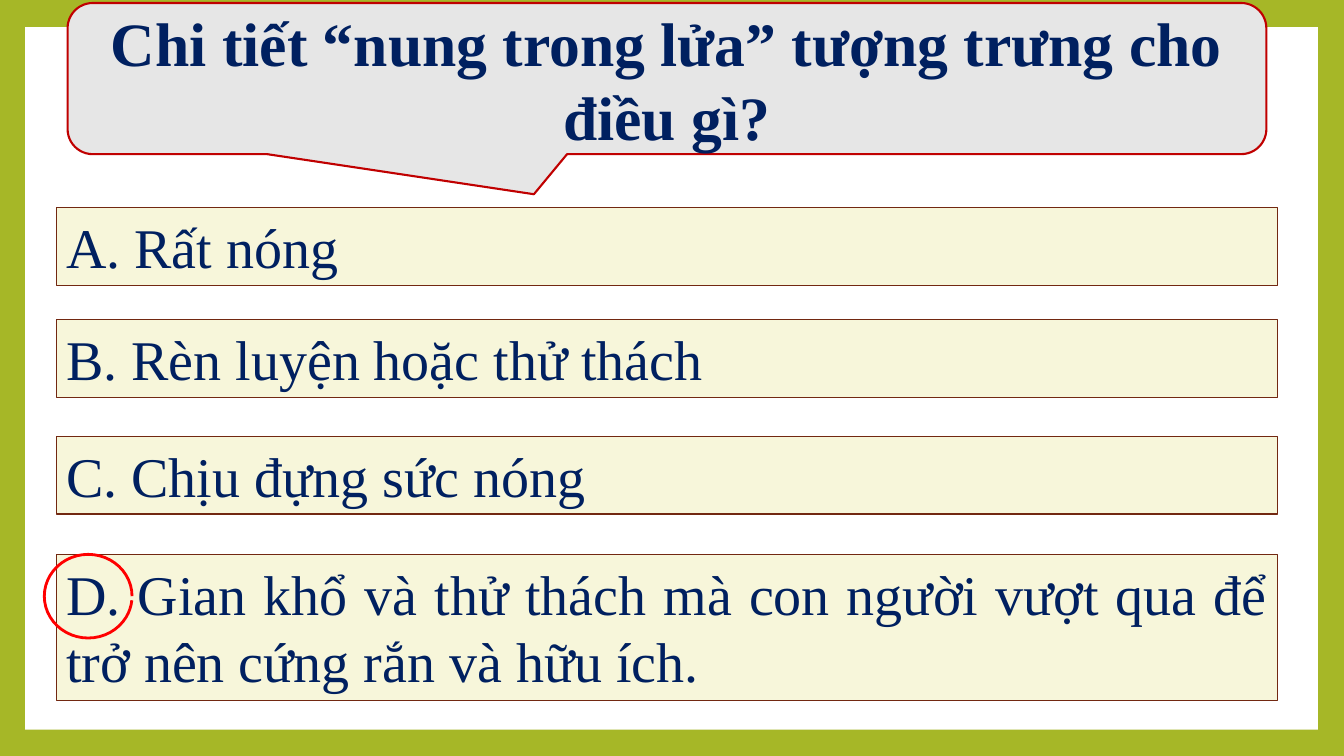
import pptx
import pptx.dml.color
import pptx.enum.shapes
import pptx.enum.text
import pptx.util

Inches = pptx.util.Inches
Pt = pptx.util.Pt
RGBColor = pptx.dml.color.RGBColor
SHAPE = pptx.enum.shapes.MSO_SHAPE
ALIGN = pptx.enum.text.PP_ALIGN
ANCHOR = pptx.enum.text.MSO_ANCHOR
AUTO_SIZE = pptx.enum.text.MSO_AUTO_SIZE

GREEN = RGBColor(0xA6, 0xB7, 0x27)
WHITE = RGBColor(0xFF, 0xFF, 0xFF)
GREY = RGBColor(0xE6, 0xE6, 0xE6)
DARK_RED = RGBColor(0xC0, 0x00, 0x00)
CREAM = RGBColor(0xF7, 0xF6, 0xDA)
BROWN = RGBColor(0x72, 0x28, 0x11)
NAVY = RGBColor(0x00, 0x20, 0x60)
RED = RGBColor(0xFF, 0x00, 0x00)
FONT = "Times New Roman"

QUESTION = "Chi tiết “nung trong lửa” tượng trưng cho điều gì?"
ANSWERS = [
    ("A. Rất nóng", 2.06, 0.77),
    ("B. Rèn luyện hoặc thử thách", 3.17, 0.77),
    ("C. Chịu đựng sức nóng", 4.33, 0.77),
    ("D. Gian khổ và thử thách mà con người vượt qua để trở nên cứng rắn và hữu ích.", 5.5, 1.45),
]
CORRECT = 3


def write_text(holder, text, size, align, bold=False):
    """Write one wrapped navy paragraph into the holder."""
    frame = holder.text_frame
    frame.text = text
    frame.word_wrap = True
    paragraph = frame.paragraphs[0]
    paragraph.alignment = align
    font = paragraph.runs[0].font
    font.name, font.size, font.bold = FONT, Pt(size), bold
    font.color.rgb = NAVY


def add_frame(slide, left, top, width, height):
    """Paint the green surround and the white panel."""
    slide.background.fill.solid()
    slide.background.fill.fore_color.rgb = GREEN
    panel = slide.shapes.add_shape(
        SHAPE.RECTANGLE, Inches(left), Inches(top), Inches(width), Inches(height))
    panel.shadow.inherit = False
    panel.fill.solid()
    panel.fill.fore_color.rgb = WHITE
    panel.line.fill.background()


def add_question(slide, left, top, width, height):
    """Draw the speech callout and set the title over it."""
    box = Inches(left), Inches(top), Inches(width), Inches(height)
    callout = slide.shapes.add_shape(SHAPE.ROUNDED_RECTANGULAR_CALLOUT, *box)
    for index, value in enumerate((-0.111, 0.765, 0.167)):
        callout.adjustments[index] = value
    callout.shadow.inherit = False
    callout.fill.solid()
    callout.fill.fore_color.rgb = GREY
    callout.line.color.rgb = DARK_RED
    callout.line.width = Pt(1.5)

    title = slide.shapes.title
    title.left, title.top, title.width, title.height = box
    write_text(title, QUESTION, 44, ALIGN.CENTER, bold=True)
    title.text_frame.auto_size = AUTO_SIZE.NONE
    title.text_frame.vertical_anchor = ANCHOR.MIDDLE
    slide.shapes._spTree.append(title._element)


def add_answer(slide, text, left, top, width, height):
    """Draw one answer in a bordered cream box."""
    answer = slide.shapes.add_textbox(
        Inches(left), Inches(top), Inches(width), Inches(height))
    answer.fill.solid()
    answer.fill.fore_color.rgb = CREAM
    answer.line.color.rgb = BROWN
    answer.line.width = Pt(0.75)
    write_text(answer, text, 40, ALIGN.JUSTIFY)
    answer.text_frame.auto_size = AUTO_SIZE.SHAPE_TO_FIT_TEXT


def add_correct_mark(slide, left, top, width, height):
    """Circle the letter of the correct answer."""
    mark = slide.shapes.add_shape(
        SHAPE.ARC, Inches(left), Inches(top), Inches(width), Inches(height))
    mark.adjustments[0] = 3.214
    mark.adjustments[1] = 0
    mark.shadow.inherit = False
    mark.fill.background()
    mark.line.color.rgb = RED
    mark.line.width = Pt(2)


def add_answers(slide, left, width):
    """Stack the answers and mark the correct one."""
    for text, top, height in ANSWERS:
        add_answer(slide, text, left, top, width, height)
    add_correct_mark(slide, left - 0.12, ANSWERS[CORRECT][1], 0.87, 0.83)


def main():
    """Build and save the quiz slide."""
    deck = pptx.Presentation()
    deck.slide_width, deck.slide_height = Inches(13.33), Inches(7.5)
    slide = deck.slides.add_slide(deck.slide_layouts[5])
    add_frame(slide, 0.25, 0.27, 12.82, 6.97)
    add_question(slide, 0.67, 0.03, 11.89, 1.5)
    add_answers(slide, 0.56, 12.11)
    deck.save("out.pptx")


if __name__ == "__main__":
    main()
